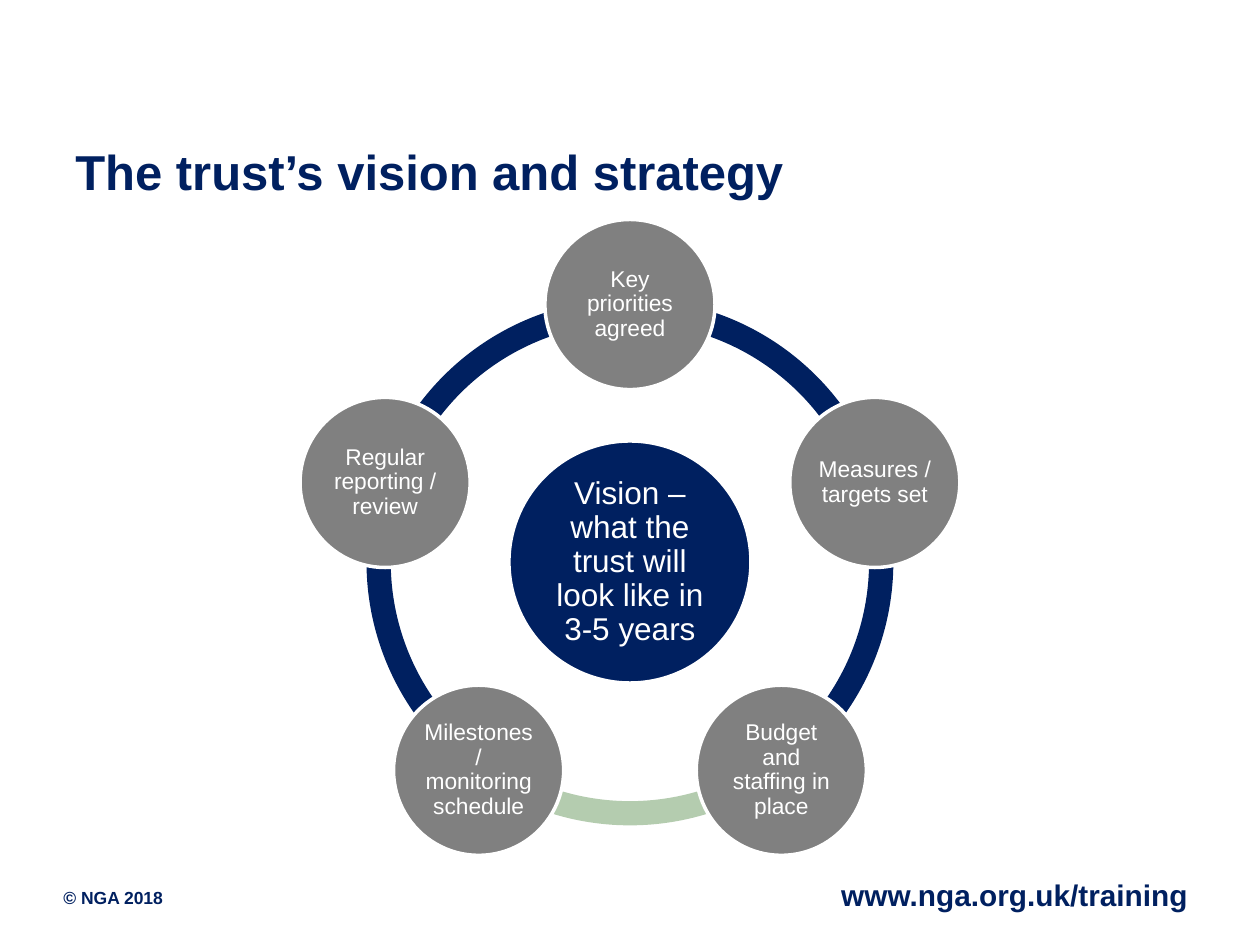
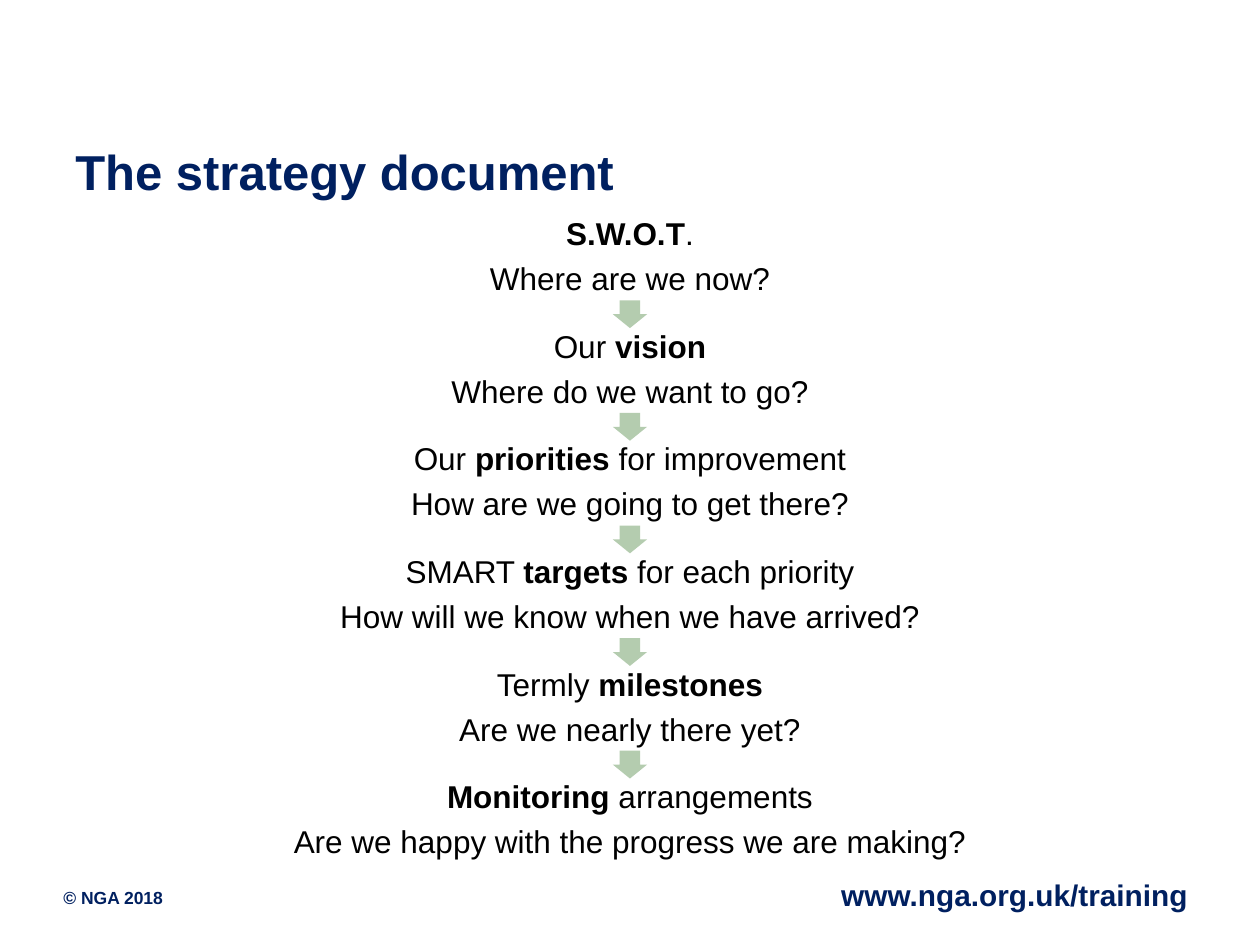
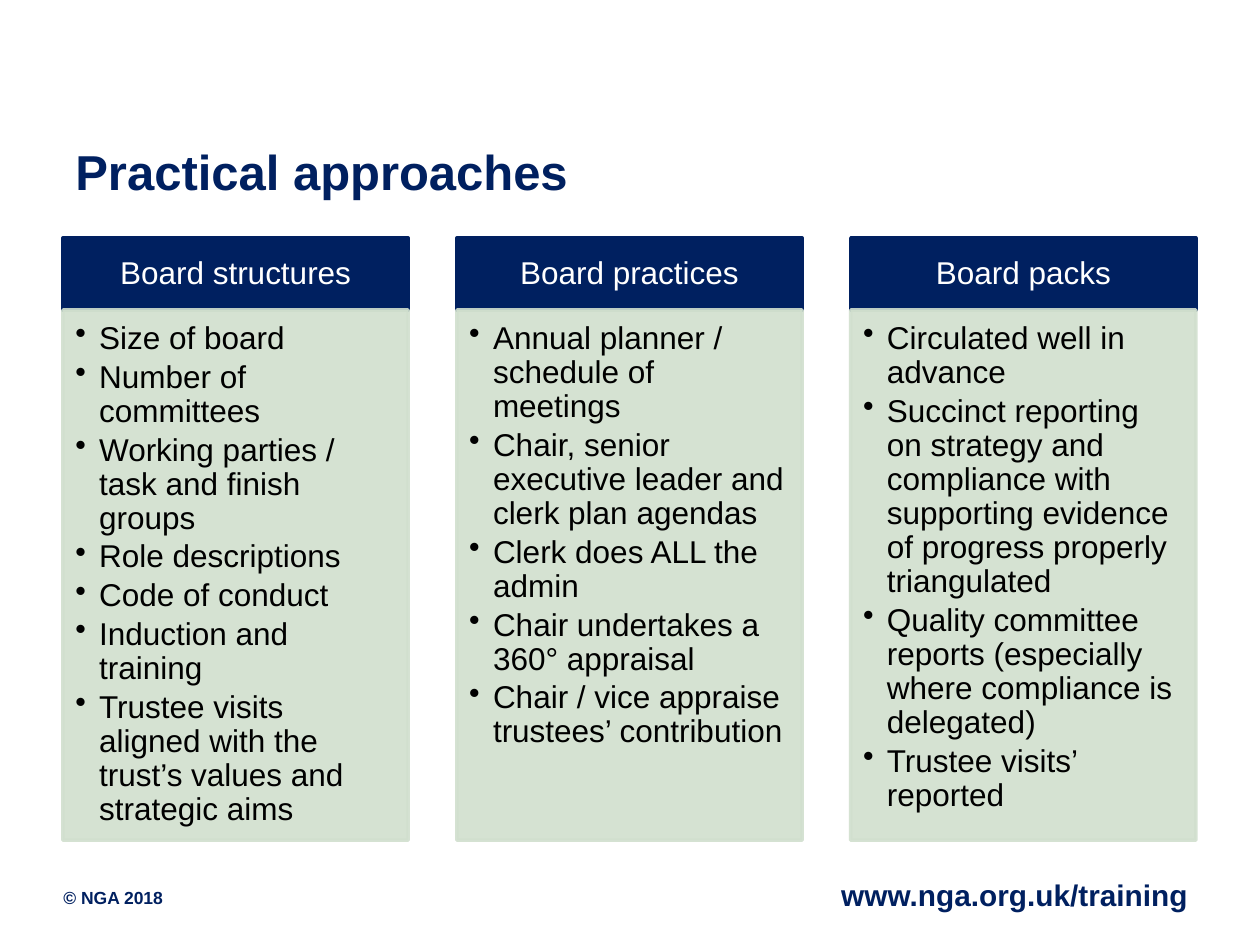
import math

from lxml import etree
from pptx import Presentation
from pptx import util as u
from pptx.dml.color import RGBColor
from pptx.enum import shapes, text
from pptx.oxml import ns

NAVY = RGBColor(0x00, 0x20, 0x60)
GREY = RGBColor(0x80, 0x80, 0x80)
GREEN = RGBColor(0xB4, 0xCC, 0xAF)
PALE_GREEN = RGBColor(0xD1, 0xDF, 0xCE)
WHITE = RGBColor(0xFF, 0xFF, 0xFF)
BLACK = RGBColor(0x00, 0x00, 0x00)

SHAPE = shapes.MSO_SHAPE
LEFT, CENTER, RIGHT = text.PP_ALIGN.LEFT, text.PP_ALIGN.CENTER, text.PP_ALIGN.RIGHT
TOP, MIDDLE = text.MSO_ANCHOR.TOP, text.MSO_ANCHOR.MIDDLE

WIDTH, HEIGHT = 25.4, 19.05
MIDDLE_X = WIDTH / 2

FOOTERS = [
    ("www.nga.org.uk/training", 17, RIGHT, (12.7, 17.55, 12.17, 0.99), (0.25, 0.13, 0.92, 0.13)),
    ("© NGA 2018", 10, LEFT, (0.53, 17.53, 4.17, 0.99), (0.75, 0.35, 0, 0.13)),
]

VISION_TITLE = "The trust’s vision and strategy"
VISION = "Vision – what the trust will look like in 3-5 years"
CYCLE = [
    ("Key priorities agreed", NAVY),
    ("Measures / targets set", NAVY),
    ("Budget and staffing in place", GREEN),
    ("Milestones / monitoring schedule", NAVY),
    ("Regular reporting / review", NAVY),
]

DOCUMENT_TITLE = "The strategy document"
STEPS = [
    ("", "S.W.O.T", ".", "Where are we now?"),
    ("Our ", "vision", "", "Where do we want to go?"),
    ("Our ", "priorities", " for improvement", "How are we going to get there?"),
    ("SMART ", "targets", " for each priority", "How will we know when we have arrived?"),
    ("Termly ", "milestones", "", "Are we nearly there yet?"),
    ("", "Monitoring", " arrangements", "Are we happy with the progress we are making?"),
]

APPROACHES_TITLE = "Practical approaches"
APPROACHES = {
    "Board structures": [
        "Size of board",
        "Number of committees",
        "Working parties / task and finish groups",
        "Role descriptions",
        "Code of conduct",
        "Induction and training",
        "Trustee visits aligned with the trust’s values and strategic aims",
    ],
    "Board practices": [
        "Annual planner / schedule of meetings",
        "Chair, senior executive leader and clerk plan agendas",
        "Clerk does ALL the admin",
        "Chair undertakes a 360° appraisal",
        "Chair / vice appraise trustees’ contribution",
    ],
    "Board packs": [
        "Circulated well in advance",
        "Succinct reporting on strategy and compliance with supporting evidence"
        " of progress properly triangulated",
        "Quality committee reports (especially where compliance is delegated)",
        "Trustee visits’ reported",
    ],
}


def set_all(target, values):
    for name, value in values.items():
        setattr(target, name, value)


def set_frame(shape, insets, anchor):
    sides = ("margin_left", "margin_top", "margin_right", "margin_bottom")
    set_all(shape.text_frame, dict(zip(sides, map(u.Cm, insets))))
    set_all(shape.text_frame, {"word_wrap": True, "vertical_anchor": anchor,
                               "auto_size": text.MSO_AUTO_SIZE.NONE})


def set_font(font, size, color, bold=False):
    set_all(font, {"name": "Arial", "size": u.Pt(size), "bold": bold})
    font.color.rgb = color


def write(shape, paragraphs, size, color, align=CENTER, bold=False, after=0, spacing=0.9,
          bullets=False):
    frame = shape.text_frame
    for index, runs in enumerate(paragraphs):
        paragraph = frame.paragraphs[0] if index == 0 else frame.add_paragraph()
        set_all(paragraph, {"alignment": align, "line_spacing": spacing,
                            "space_before": u.Pt(0), "space_after": u.Pt(after)})
        if bullets:
            properties = paragraph._p.get_or_add_pPr()
            properties.set("marL", str(u.Cm(0.48)))
            properties.set("indent", str(-u.Cm(0.48)))
            etree.SubElement(properties, ns.qn("a:buChar")).set("char", "•")
        for words, strong in [(runs, bold)] if isinstance(runs, str) else runs:
            if words:
                run = paragraph.add_run()
                run.text = words
                set_font(run.font, size, color, strong)


def add_shape(slide, kind, box, fill, line=None, adjustments=()):
    shape = slide.shapes.add_shape(kind, *map(u.Cm, box))
    shape.shadow.inherit = False
    shape.fill.solid()
    shape.fill.fore_color.rgb = fill
    if line is None:
        shape.line.fill.background()
    else:
        shape.line.color.rgb = line
        shape.line.width = u.Pt(2)
    for index, value in enumerate(adjustments):
        shape.adjustments[index] = value
    return shape


def centred(x, y, width, height):
    return x - width / 2, y - height / 2, width, height


def add_slide(presentation, title):
    slide = presentation.slides.add_slide(presentation.slide_layouts[5])
    shape = slide.shapes.title
    box = map(u.Cm, (1.27, 2.62, 22.86, 1.96))
    set_all(shape, dict(zip(("left", "top", "width", "height"), box)))
    set_frame(shape, (0.25, 0.24, 0.25, 0.13), TOP)
    write(shape, [title], 28, NAVY, LEFT, bold=True, spacing=1.0)
    return slide


def add_footers(slide):
    layout = slide.slide_layout
    for placeholder in list(layout.placeholders)[1:]:
        layout.shapes.element.remove(placeholder.element)
    footers = []
    for words, size, align, box, insets in FOOTERS:
        footer = slide.shapes.add_textbox(*map(u.Cm, box))
        set_frame(footer, insets, TOP)
        write(footer, [words], size, NAVY, align, bold=True, spacing=1.0)
        footers.append(footer)
    for footer in footers:
        layout.shapes.element.append(footer.element)


def add_disc(slide, x, y, diameter, fill, words, size):
    disc = add_shape(slide, SHAPE.OVAL, centred(x, y, diameter, diameter), fill, WHITE)
    set_frame(disc, (0.05,) * 4, MIDDLE)
    write(disc, [words], size, WHITE)


def draw_cycle(slide):
    middle_y, ring, radius = 11.33, 10.62, 5.19
    turn = 360 / len(CYCLE)
    angles = [(270 + turn * index) % 360 for index in range(len(CYCLE))]
    for (words, color), angle in zip(CYCLE, angles):
        ends = (angle * 0.6, (angle + turn) % 360 * 0.6, 0.046)
        add_shape(slide, SHAPE.BLOCK_ARC, centred(MIDDLE_X, middle_y, ring, ring), color,
                  adjustments=ends)
    add_disc(slide, MIDDLE_X, middle_y, 4.88, NAVY, VISION, 18)
    for (words, color), angle in zip(CYCLE, angles):
        x = MIDDLE_X + radius * math.cos(math.radians(angle))
        y = middle_y + radius * math.sin(math.radians(angle))
        add_disc(slide, x, y, 3.43, GREY, words, 13)


def draw_steps(slide):
    first_top, pitch, height = 4.44, 2.27, 1.52
    for index, (before, strong, after, question) in enumerate(STEPS):
        top = first_top + pitch * index
        step = add_shape(slide, SHAPE.ROUNDED_RECTANGLE,
                         (MIDDLE_X - 7.9, top, 15.8, height), WHITE, WHITE, [0.1])
        set_frame(step, (0.18,) * 4, MIDDLE)
        heading = [(before, False), (strong, True), (after, False)]
        write(step, [heading, question], 18, BLACK, after=6.3)
        if index < len(STEPS) - 1:
            gap_middle = top + (height + pitch) / 2
            add_shape(slide, SHAPE.DOWN_ARROW, centred(MIDDLE_X, gap_middle, 0.69, 0.56),
                      GREEN, adjustments=(0.6, 0.5))


def draw_columns(slide):
    width, pitch, top, header_height = 6.96, 7.94, 4.8, 1.45
    for index, (heading, points) in enumerate(APPROACHES.items()):
        left = 1.27 + pitch * index
        header = add_shape(slide, SHAPE.RECTANGLE, (left, top, width, header_height), NAVY, NAVY)
        set_frame(header, (0.36, 0.2, 0.36, 0.2), MIDDLE)
        write(header, [heading], 18, WHITE)
        body = add_shape(slide, SHAPE.RECTANGLE, (left, top + header_height, width, 10.69),
                         PALE_GREEN, PALE_GREEN)
        for color in body.element.spPr.iter(ns.qn("a:srgbClr")):
            etree.SubElement(color, ns.qn("a:alpha")).set("val", "90000")
        set_frame(body, (0.25, 0.25, 0.36, 0.41), TOP)
        write(body, points, 18, BLACK, LEFT, after=2.7, bullets=True)


def main():
    presentation = Presentation()
    presentation.slide_width, presentation.slide_height = u.Cm(WIDTH), u.Cm(HEIGHT)
    vision = add_slide(presentation, VISION_TITLE)
    add_footers(vision)
    draw_cycle(vision)
    draw_steps(add_slide(presentation, DOCUMENT_TITLE))
    draw_columns(add_slide(presentation, APPROACHES_TITLE))
    presentation.save("out.pptx")


if __name__ == "__main__":
    main()
